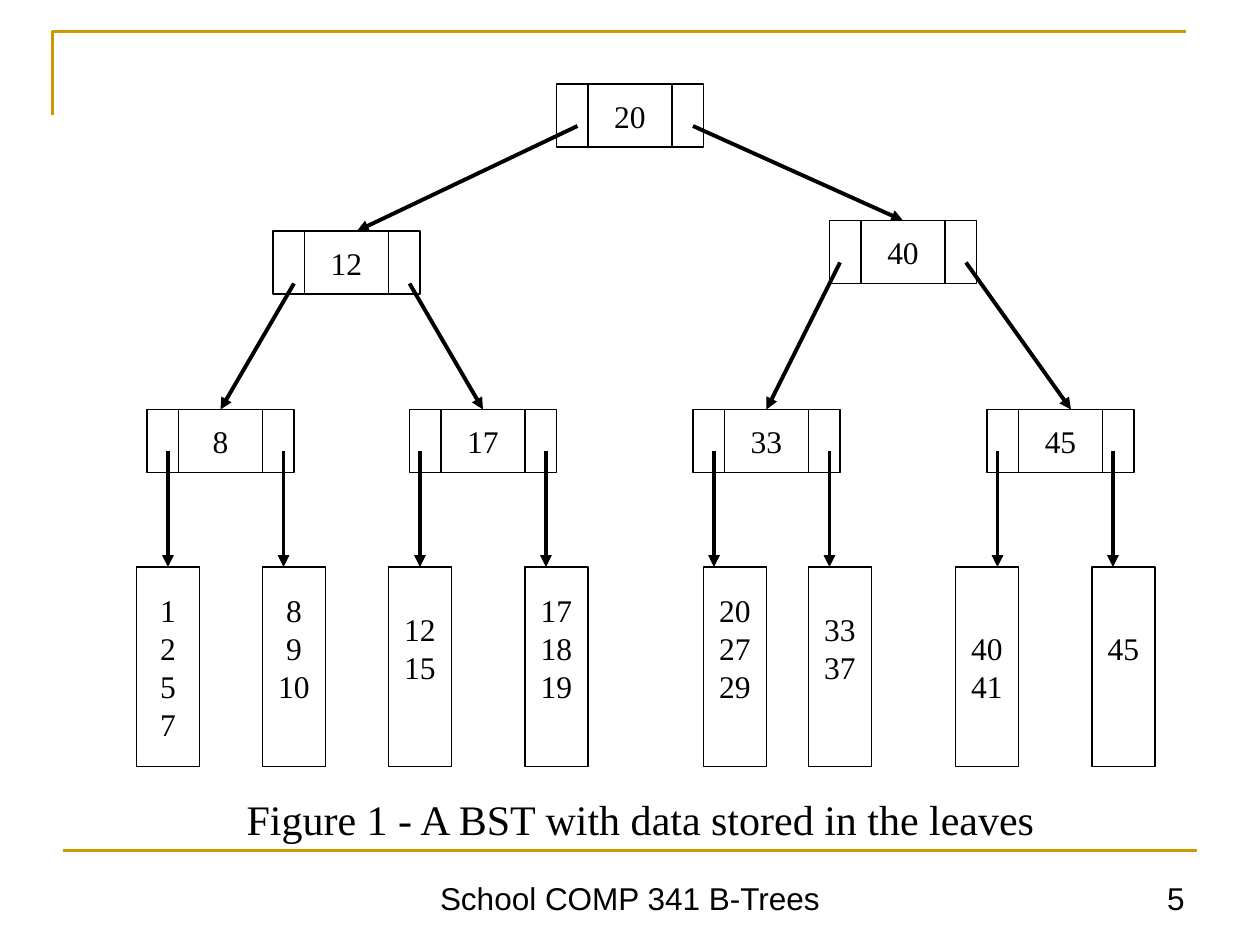
from pptx import Presentation, util as u
from pptx.dml.color import RGBColor
from pptx.enum import shapes, text
from pptx.oxml.ns import qn
from lxml import etree

# The slide is a grid of 120 columns by 90 rows, 12 to the inch
GRID = 12
BLACK, GOLD = "000000", "CC9900"
SERIF, SANS = "Times New Roman", "Arial"
KEY_WIDTH, KEY_HEIGHT = 14, 6
LEAF_TOP, LEAF_WIDTH, LEAF_HEIGHT = 54, 6, 19
POINTER_TOP = 43

# key: (column, row)
KEYS = {
    "20": (53, 8), "12": (26, 22), "40": (79, 21),
    "8": (14, 39), "17": (39, 39), "33": (66, 39), "45": (94, 39),
}
# (start column, start row, child key, tip column)
BRANCHES = [
    (55, 12, "12", 34), (66, 12, "40", 86),
    (28, 27, "8", 21), (39, 27, "17", 46),
    (80, 25, "33", 73), (92, 25, "45", 102),
]
# (column, pointer column, values, lines kept free below the values)
LEAVES = [
    (13, 16, ["1", "2", "5", "7"], 0),
    (25, 27, ["8", "9", "10"], 1),
    (37, 40, ["12", "15"], 1),
    (50, 52, ["17", "18", "19"], 1),
    (67, 68, ["20", "27", "29"], 1),
    (77, 79, ["33", "37"], 1),
    (91, 95, ["40", "41"], 0),
    (104, 106, ["45"], 1),
]


def cells(*counts):
    return [u.Inches(count / GRID) for count in counts]


def color(value):
    return RGBColor.from_string(value)


def style_line(shape, value, width):
    shape.line.color.rgb = color(value)
    shape.line.width = u.Pt(width)


def write(shape, lines, size, font, align, anchor, wrap=True):
    frame = shape.text_frame
    frame.word_wrap = wrap
    frame.vertical_anchor = anchor
    for index, line in enumerate(lines):
        para = frame.add_paragraph() if index else frame.paragraphs[0]
        para.alignment = align
        span = para.add_run()
        span.text = line
        span.font.size = u.Pt(size)
        span.font.name = font
        span.font.color.rgb = color(BLACK)


def add_label(page, area, line, size, font, align, anchor):
    box = page.shapes.add_textbox(*cells(*area))
    write(box, [line], size, font, align, anchor)


def add_box(page, area, lines):
    box = page.shapes.add_shape(shapes.MSO_SHAPE.RECTANGLE, *cells(*area))
    box.shadow.inherit = False
    box.fill.background()
    style_line(box, BLACK, 0.75)
    write(box, lines, 18, SERIF, text.PP_ALIGN.CENTER,
          text.MSO_ANCHOR.MIDDLE, wrap=False)
    return box


def add_line(page, start, end, value=BLACK, width=0.75):
    line = page.shapes.add_connector(
        shapes.MSO_CONNECTOR.STRAIGHT, *cells(*start, *end))
    style_line(line, value, width)
    etree.SubElement(line._element.spPr, qn("a:effectLst"))
    return line


def add_arrow(page, start, end, target):
    arrow = add_line(page, start, end, width=2.25)
    etree.SubElement(arrow.line._get_or_add_ln(), qn("a:tailEnd"), type="triangle")
    # Join only the arrows that meet the middle of the top side
    if abs(cells(end[0])[0] - target.left - target.width / 2) < 10:
        arrow.end_connect(target, 0)


def add_key(page, key, left, top):
    box = add_box(page, (left, top, KEY_WIDTH, KEY_HEIGHT), [key])
    for column in (left + 3, left + 11):
        add_line(page, (column, top), (column, top + KEY_HEIGHT))
    return box


def add_leaf(page, left, values, free_lines):
    box = add_box(page, (left, LEAF_TOP, LEAF_WIDTH, LEAF_HEIGHT), values)
    box.text_frame.margin_bottom = u.Inches(0.05 + 0.3 * free_lines)
    return box


def add_frame(page):
    corner = page.shapes.build_freeform(*cells(5, 11))
    corner.add_line_segments([cells(5, 3), cells(113, 3)], close=False)
    outline = corner.convert_to_shape()
    outline.shadow.inherit = False
    outline.fill.background()
    style_line(outline, GOLD, 1.5)
    add_line(page, (6, 81), (114, 81), GOLD, 1.5)


def main():
    deck = Presentation()
    deck.slide_width, deck.slide_height = cells(120, 90)
    page = deck.slides.add_slide(deck.slide_layouts[6])

    # Frame and footer
    add_frame(page)
    add_label(page, (21, 82, 78, 5.9), "School COMP 341 B-Trees", 18, SANS,
              text.PP_ALIGN.CENTER, text.MSO_ANCHOR.BOTTOM)
    add_label(page, (86, 82, 28, 5.9), "5", 18, SANS,
              text.PP_ALIGN.RIGHT, text.MSO_ANCHOR.BOTTOM)

    # Inner nodes and the branches between them
    nodes = {key: add_key(page, key, *place) for key, place in KEYS.items()}
    for column, row, child, tip in BRANCHES:
        add_arrow(page, (column, row), (tip, KEYS[child][1]), nodes[child])

    # Leaves and their pointers
    for left, pointer, values, free_lines in LEAVES:
        leaf = add_leaf(page, left, values, free_lines)
        add_arrow(page, (pointer, POINTER_TOP), (pointer, LEAF_TOP), leaf)

    # Caption
    add_label(page, (10, 75, 102, 6),
              "Figure 1 - A BST with data stored in the leaves", 24, SERIF,
              text.PP_ALIGN.CENTER, text.MSO_ANCHOR.TOP)

    deck.save("out.pptx")


if __name__ == "__main__":
    main()
